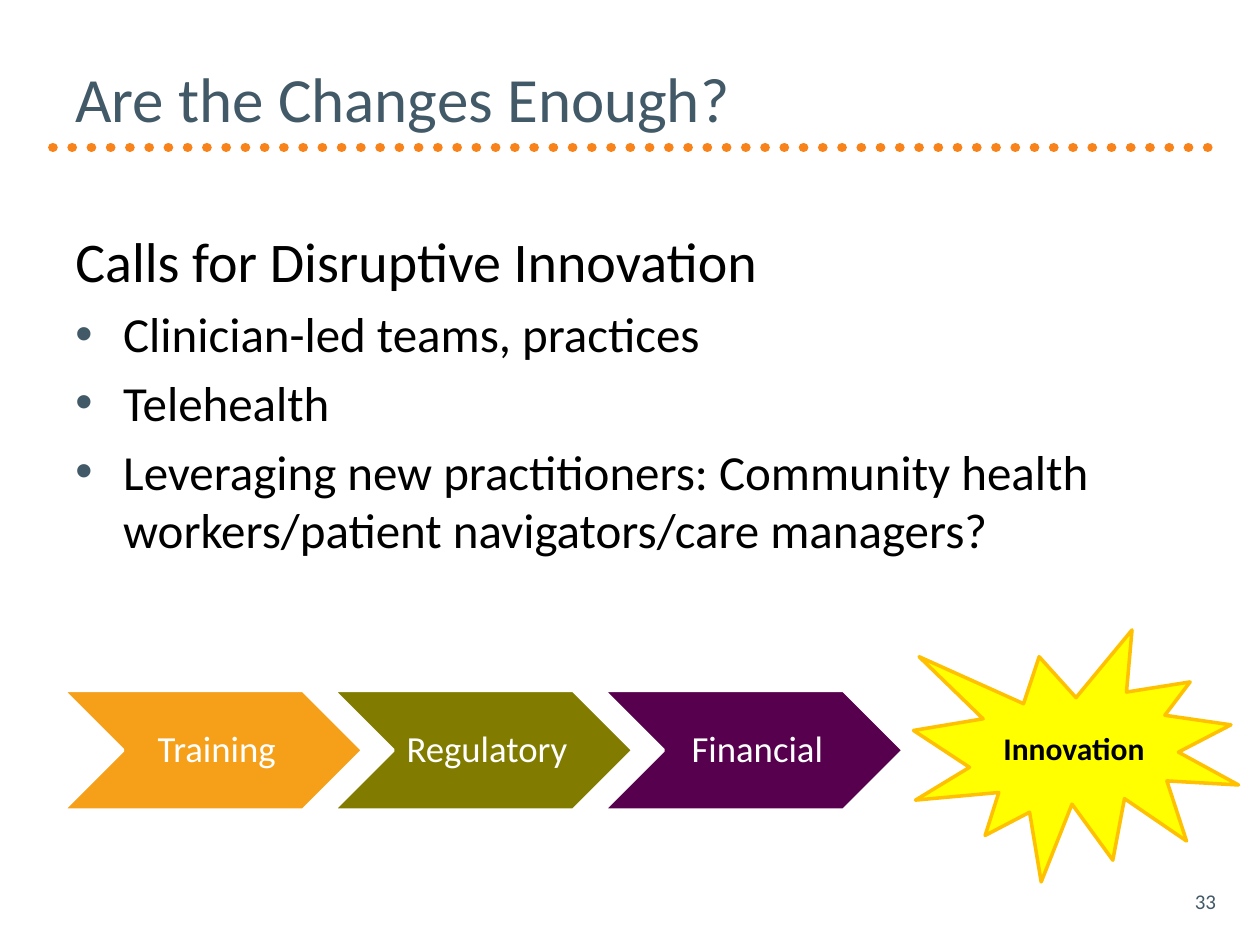
import pptx
import pptx.dml.color
import pptx.enum.dml
import pptx.enum.shapes
import pptx.enum.text
import pptx.oxml.ns
import pptx.util
from lxml import etree

SHAPE = pptx.enum.shapes.MSO_SHAPE
ALIGN = pptx.enum.text.PP_ALIGN
ANCHOR = pptx.enum.text.MSO_ANCHOR
qn = pptx.oxml.ns.qn

COLS, ROWS = 20, 15
SLATE, ORANGE, BLACK, WHITE = "425968", "F7831A", "000000", "FFFFFF"


def rgb(code):
    return pptx.dml.color.RGBColor.from_string(code)


class Page:
    """Holds the style and the current slide; lengths are grid columns and rows."""

    font = "Calibri"

    def __init__(self, prs):
        self.col = prs.slide_width / COLS
        self.row = prs.slide_height / ROWS
        self.s = prs.slides.add_slide(prs.slide_layouts[6])

    def box(self, x, y, w, h):
        return (round(x * self.col), round(y * self.row),
                round(w * self.col), round(h * self.row))

    def style(self, p, size, color, align=ALIGN.LEFT, bold=False):
        p.alignment = align
        for r in p.runs:
            r.font.name = self.font
            r.font.size = pptx.util.Pt(size)
            r.font.bold = bold
            r.font.color.rgb = rgb(color)

    def text(self, place, text, size, color, align=ALIGN.LEFT, anchor=ANCHOR.MIDDLE):
        tf = self.s.shapes.add_textbox(*self.box(*place)).text_frame
        tf.word_wrap = True
        tf.vertical_anchor = anchor
        tf.text = text
        for p in tf.paragraphs:
            self.style(p, size, color, align)
        return tf

    def bullets(self, place, heading, items):
        tf = self.text(place, "\n".join([heading, *items]), 28, BLACK,
                       anchor=ANCHOR.TOP)
        indent = round(0.76 * self.col)
        for i, p in enumerate(tf.paragraphs):
            size = 28 if i else 32
            self.style(p, size, BLACK)
            p.space_before = pptx.util.Pt(size * 0.2)
            pPr = p._p.get_or_add_pPr()
            pPr.set("marL", str(indent))
            pPr.set("indent", str(-indent))
            if i:
                clr = etree.SubElement(pPr, qn("a:buClr"))
                etree.SubElement(clr, qn("a:srgbClr"), val=SLATE)
                etree.SubElement(pPr, qn("a:buFont"), typeface="Arial")
                etree.SubElement(pPr, qn("a:buChar"), char="•")

    def dotted_rule(self, x1, x2, y, color, width):
        x, top, length, _ = self.box(x1, y, x2 - x1, 0)
        line = self.s.shapes.add_connector(
            pptx.enum.shapes.MSO_CONNECTOR.STRAIGHT, x, top, x + length, top)
        line.line.color.rgb = rgb(color)
        line.line.width = pptx.util.Pt(width)
        line.line.dash_style = pptx.enum.dml.MSO_LINE.ROUND_DOT
        line.line._ln.set("cap", "rnd")
        etree.SubElement(line._element.spPr, qn("a:effectLst"))

    def shape(self, kind, place, label, size, fill, outline, color, bold=False):
        sp = self.s.shapes.add_shape(kind, *self.box(*place))
        sp.shadow.inherit = False
        sp.fill.solid()
        sp.fill.fore_color.rgb = rgb(fill)
        sp.line.color.rgb = rgb(outline)
        sp.line.width = pptx.util.Pt(2)
        tf = sp.text_frame
        tf.word_wrap = False
        tf.vertical_anchor = ANCHOR.MIDDLE
        tf.text = label
        self.style(tf.paragraphs[0], size, color, ALIGN.CENTER, bold)
        return tf

    def chevrons(self, x, y, w, h, step, stages):
        for i, (label, fill) in enumerate(stages):
            tf = self.shape(SHAPE.CHEVRON, (x + i * step, y, w, h), label, 21,
                            fill, WHITE, WHITE)
            tf.margin_left = pptx.util.Inches(0.09)
            tf.margin_right = pptx.util.Inches(0.03)
            tf.margin_top = tf.margin_bottom = pptx.util.Inches(0.03)
            tf.paragraphs[0].line_spacing = 0.9


def main():
    prs = pptx.Presentation()
    prs.slide_width = pptx.util.Inches(10)
    prs.slide_height = pptx.util.Inches(7.5)
    page = Page(prs)

    # Title and rule
    page.dotted_rule(0.84, 19.34, 2.34, ORANGE, 5.5)
    page.text((1, 0.6, 18, 1.9), "Are the Changes Enough?", 36, SLATE)

    # Body
    page.bullets((1, 3.5, 18, 9.9), "Calls for Disruptive Innovation", [
        "Clinician-led teams, practices",
        "Telehealth",
        "Leveraging new practitioners: Community health "
        "workers/patient navigators/care managers?",
    ])

    # Page number
    page.text((14.84, 13.9, 4.66, 0.8), "33", 12, SLATE, ALIGN.RIGHT)

    # Steps leading to innovation
    page.chevrons(1, 10.96, 4.76, 1.9, 4.29, [
        ("Training", "F6A01A"),
        ("Regulatory", "817C00"),
        ("Financial", "56004E"),
    ])
    page.shape(SHAPE.EXPLOSION1, (14.5, 10, 5.16, 4), "Innovation", 18,
               "FFFF00", "FFC000", BLACK, bold=True)

    prs.save("out.pptx")


if __name__ == "__main__":
    main()
